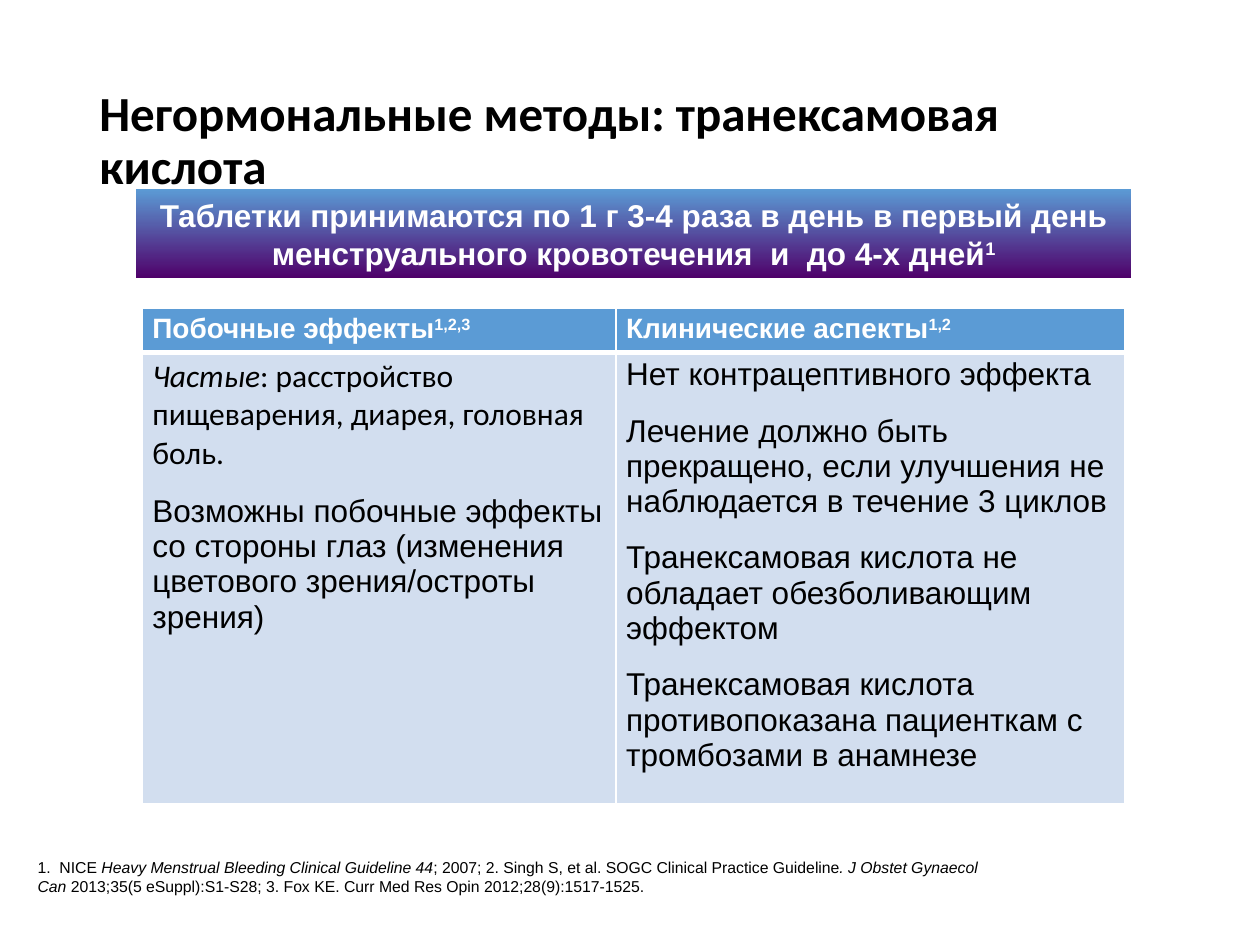
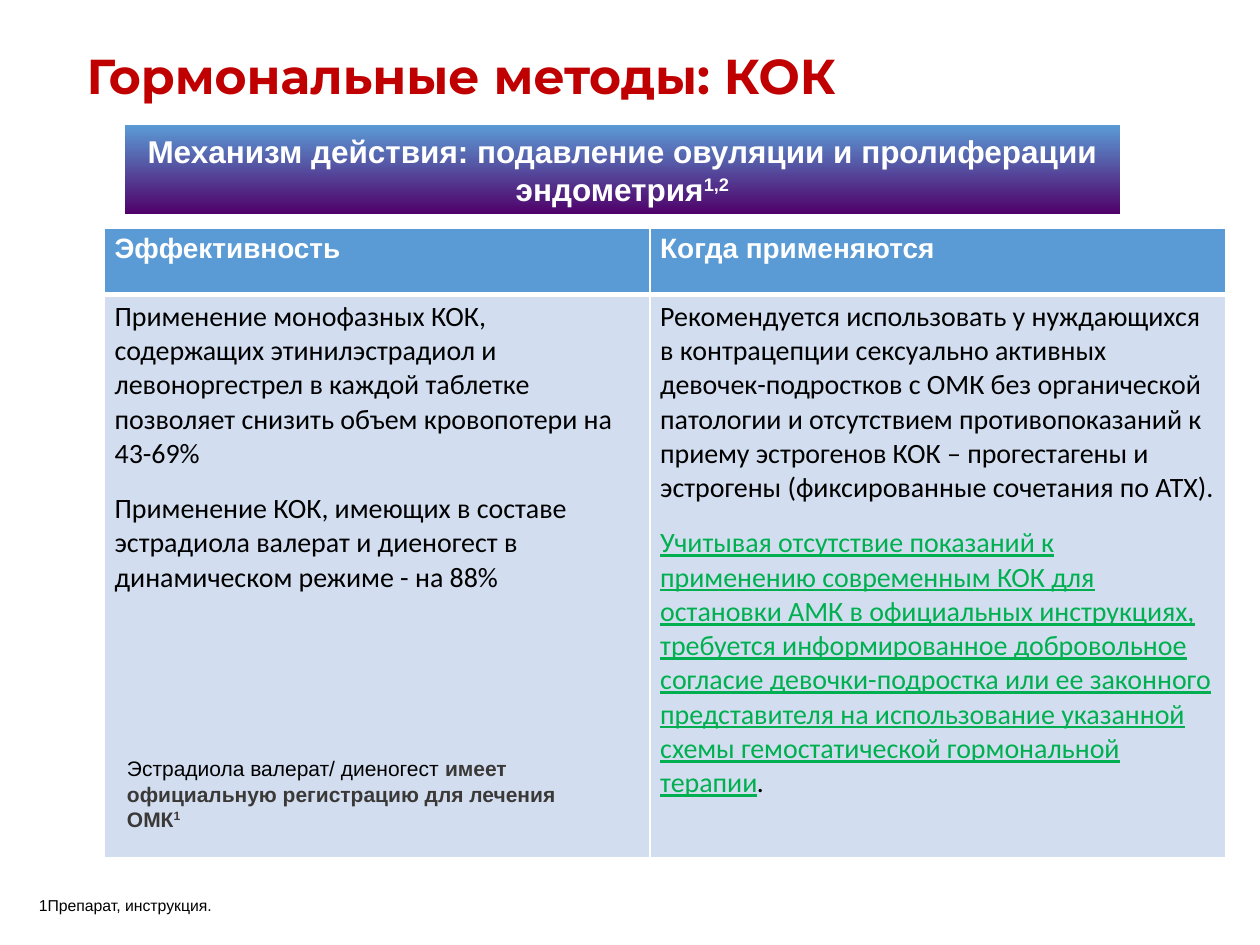
from lxml.etree import SubElement
from pptx import Presentation
from pptx.dml.color import RGBColor
from pptx.enum.shapes import MSO_SHAPE as Shape
from pptx.enum.text import MSO_ANCHOR as Anchor, PP_ALIGN as Align
from pptx.oxml.ns import qn
from pptx.util import Inches, Pt

COLORS = {
    "black": "000000", "white": "FFFFFF", "red": "C00000", "green": "00B050",
    "gray": "3B3838", "violet": "4F0069", "blue": "5B9BD5", "pale": "D2DEEF",
}


def rgb(name):
    """Return the palette colour with this name."""
    return RGBColor.from_string(COLORS[name])


def style_run(run, bold=None, italic=None, underline=None, color=None, raised=False):
    """Apply what sets a run apart from its paragraph."""
    run.font.bold, run.font.italic, run.font.underline = bold, italic, underline
    if color:
        run.font.color.rgb = rgb(color)
    if raised:
        run._r.get_or_add_rPr().set("baseline", "30000")


def write(frame, paragraphs, size, font="Arial", color="black", bold=False,
          align=Align.LEFT, after=0, leading=None):
    """Fill a frame with paragraphs, each a list of (text, run style) pairs."""
    frame.word_wrap = True
    for index, spans in enumerate(paragraphs):
        paragraph = frame.add_paragraph() if index else frame.paragraphs[0]
        paragraph.alignment = align
        paragraph.space_after = Pt(after)
        paragraph.line_spacing = leading
        paragraph.font.name = font
        paragraph.font.size = Pt(size)
        paragraph.font.bold = bold
        paragraph.font.color.rgb = rgb(color)
        for text, style in spans:
            run = paragraph.add_run()
            run.text = text
            style_run(run, **style)


def plain(*texts):
    """Return paragraphs of one unstyled run each."""
    return [[(text, {})] for text in texts]


def add_text(slide, box, paragraphs, size, anchor=Anchor.TOP, **style):
    """Add a text box at box (left, top, width, height)."""
    frame = slide.shapes.add_textbox(*map(Inches, box)).text_frame
    frame.vertical_anchor = anchor
    write(frame, paragraphs, size, **style)


def add_title(slide, box, text, font, color):
    """Add the slide title."""
    add_text(slide, box, plain(text), 28, Anchor.MIDDLE,
             font=font, color=color, bold=True, leading=0.9)


def add_key_message(slide, left, top, text, reference):
    """Add the gradient band with the key message and its reference."""
    band = slide.shapes.add_shape(Shape.RECTANGLE, *map(Inches, (left, top, 7.9, 0.71)))
    band.shadow.inherit = False
    band.line.fill.background()
    band.fill.gradient()
    band.fill.gradient_angle = 90
    for stop, color in zip(band.fill.gradient_stops, ("violet", "blue")):
        stop.color.rgb = rgb(color)
    band.text_frame.vertical_anchor = Anchor.MIDDLE
    write(band.text_frame, [[(text, {}), (reference, {"raised": True})]], 18,
          color="white", bold=True, align=Align.CENTER)


def add_borders(cell, bottom):
    """Draw white cell borders, the bottom one with its own width."""
    properties = cell._tc.get_or_add_tcPr()
    for side, width in (("L", 1), ("R", 1), ("T", 1), ("B", bottom)):
        line = SubElement(properties, qn(f"a:ln{side}"), w=str(Pt(width)))
        fill = SubElement(line, qn("a:solidFill"))
        SubElement(fill, qn("a:srgbClr"), val=COLORS["white"])


def add_comparison(slide, left, top, widths, heights, headers, bodies, size):
    """Add a two-row table; each body is (paragraphs, font)."""
    table = slide.shapes.add_table(
        2, len(widths), *map(Inches, (left, top, sum(widths), sum(heights)))).table
    table.horz_banding = False
    for row, height in zip(table.rows, heights):
        row.height = Inches(height)
    for index, (width, header, (body, font)) in enumerate(zip(widths, headers, bodies)):
        table.columns[index].width = Inches(width)
        head_cell, body_cell = table.cell(0, index), table.cell(1, index)
        for cell, color, bottom in ((head_cell, "blue", 3), (body_cell, "pale", 1)):
            add_borders(cell, bottom)
            cell.fill.solid()
            cell.fill.fore_color.rgb = rgb(color)
            cell.margin_left = cell.margin_right = Inches(0.08)
            cell.margin_top = cell.margin_bottom = Inches(0.04)
        write(head_cell.text_frame, [header], 16, color="white", bold=True)
        write(body_cell.text_frame, body, size, font=font, after=12)


def build_tranexamic_acid(slide):
    """Build the slide on tranexamic acid."""
    raised, italic = {"raised": True}, {"italic": True}
    add_title(slide, (0.69, 0.4, 8.62, 1.45),
              "Негормональные методы: транексамовая кислота", "Calibri", "black")
    side_effects = [
        [("Частые", italic),
         (": расстройство пищеварения, диарея, головная боль.", {})],
        [("Возможны побочные эффекты со стороны глаз "
          "(изменения цветового зрения/остроты зрения)", {})],
    ]
    clinical_aspects = plain(
        "Нет контрацептивного эффекта",
        "Лечение должно быть прекращено, если улучшения не наблюдается в течение 3 циклов",
        "Транексамовая кислота не обладает обезболивающим эффектом",
        "Транексамовая кислота противопоказана пациенткам с тромбозами в анамнезе",
    )
    add_comparison(
        slide, 1.13, 2.45, (3.76, 4.04), (0.33, 3.37),
        ([("Побочные эффекты", {}), ("1,2,3", raised)],
         [("Клинические аспекты", {}), ("1,2", raised)]),
        ((side_effects, "Arial"), (clinical_aspects, "Arial")), 18)
    common = slide.shapes[-1].table.cell(1, 0).text_frame.paragraphs[0]
    common.font.name = "Calibri"
    add_text(slide, (0.2, 6.76, 7.91, 0.56), [[
        ("1.  NICE ", {}),
        ("Heavy Menstrual Bleeding Clinical Guideline 44", italic),
        ("; 2007; 2. Singh S, et al. SOGC Clinical Practice Guideline", {}),
        (". J Obstet Gynaecol Can ", italic),
        ("2013;35(5 eSuppl):S1-S28; 3. Fox KE. "
         "Curr Med Res Opin 2012;28(9):1517-1525.", {}),
    ]], 9)
    add_key_message(
        slide, 1.08, 1.5,
        "Таблетки принимаются по 1 г 3-4 раза в день в первый день "
        "менструального кровотечения  и  до 4-х дней", "1")


def build_contraceptives(slide):
    """Build the slide on combined oral contraceptives."""
    add_title(slide, (0.59, 0.36, 7.33, 0.52),
              "Гормональные методы: КОК", "Montserrat", "red")
    efficacy = plain(
        "Применение монофазных КОК, содержащих этинилэстрадиол и левоноргестрел "
        "в каждой таблетке позволяет снизить объем кровопотери на 43-69%",
        "Применение КОК, имеющих в составе эстрадиола валерат и диеногест "
        "в динамическом режиме - на 88%",
    )
    indications = plain(
        "Рекомендуется использовать у нуждающихся в контрацепции сексуально активных "
        "девочек-подростков с ОМК без органической патологии и отсутствием "
        "противопоказаний к приему эстрогенов КОК – прогестагены и эстрогены "
        "(фиксированные сочетания по АТХ).",
    ) + [[
        ("Учитывая отсутствие показаний к применению современным КОК для остановки АМК "
         "в официальных инструкциях, требуется информированное добровольное согласие "
         "девочки-подростка или ее законного представителя на использование указанной "
         "схемы гемостатической гормональной терапии",
         {"color": "green", "underline": True}),
        (".", {"italic": True}),
    ]]
    add_comparison(
        slide, 0.83, 1.81, (4.33, 4.57), (0.53, 4.47),
        ([("Эффективность", {})], [("Когда применяются", {})]),
        ((efficacy, "Calibri"), (indications, "Calibri")), 16)
    add_text(slide, (0.21, 7.06, 4.65, 0.25), plain("1Препарат, инструкция."), 9)
    add_text(slide, (0.91, 5.95, 3.87, 0.71), [[
        ("Эстрадиола валерат/ диеногест ", {}),
        ("имеет официальную регистрацию для лечения ОМК",
         {"bold": True, "color": "gray"}),
        ("1", {"bold": True, "color": "gray", "raised": True}),
    ]], 12)
    add_key_message(
        slide, 0.99, 0.99,
        "Механизм действия: подавление овуляции и пролиферации эндометрия", "1,2")


def main():
    """Build and save the presentation."""
    deck = Presentation()
    deck.slide_width, deck.slide_height = Inches(10), Inches(7.5)
    for build in (build_tranexamic_acid, build_contraceptives):
        build(deck.slides.add_slide(deck.slide_layouts[6]))
    deck.save("out.pptx")


if __name__ == "__main__":
    main()
